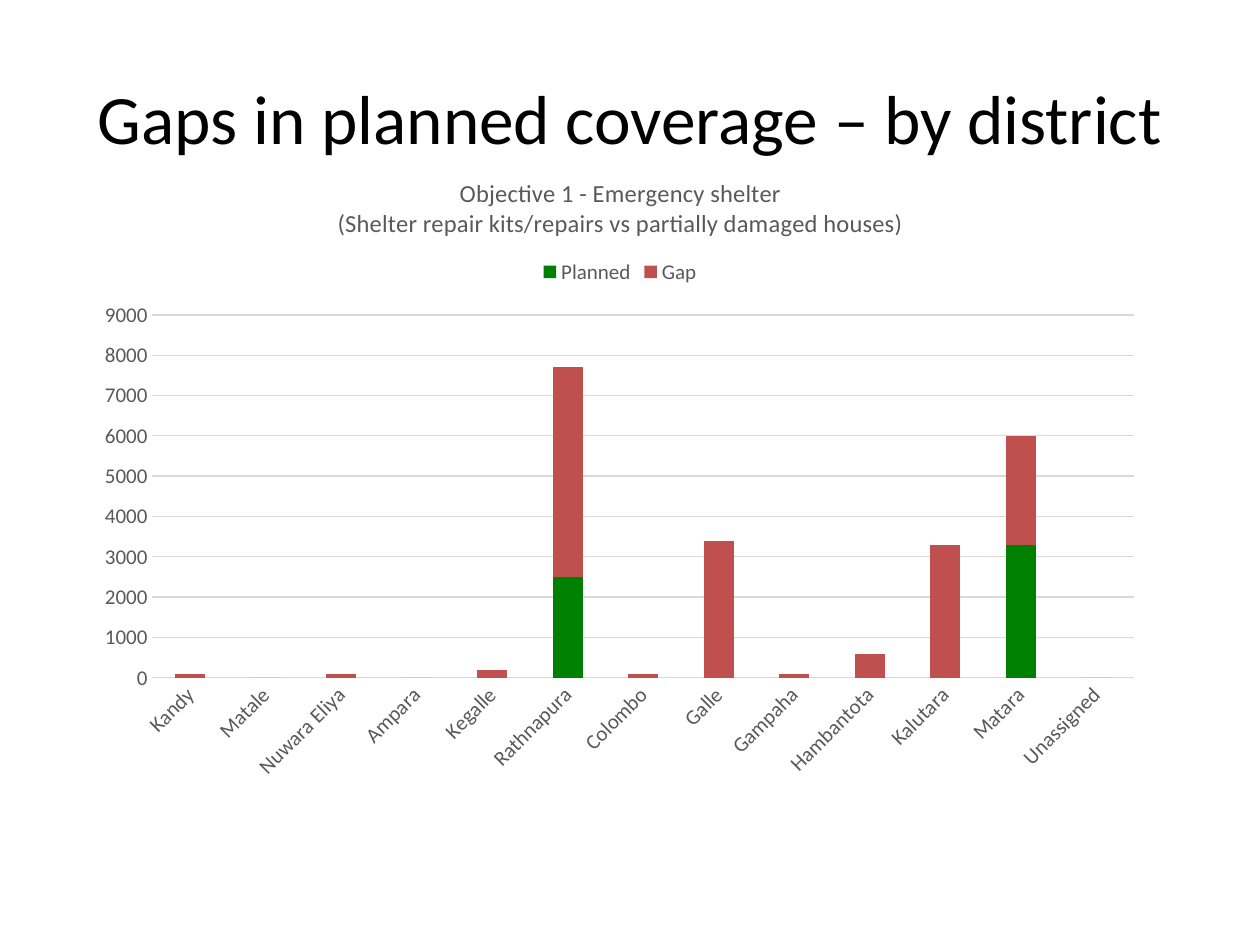
import pptx
import pptx.chart.data
import pptx.dml.color
import pptx.enum.chart
import pptx.enum.text
import pptx.oxml
import pptx.oxml.ns
import pptx.util

BLACK = pptx.dml.color.RGBColor(0x00, 0x00, 0x00)
GRAY = pptx.dml.color.RGBColor(0x59, 0x59, 0x59)
LIGHT_GRAY = pptx.dml.color.RGBColor(0xD9, 0xD9, 0xD9)
GREEN = pptx.dml.color.RGBColor(0x00, 0x80, 0x00)
RED = pptx.dml.color.RGBColor(0xC0, 0x50, 0x4D)
CHART_WIDTH, CHART_HEIGHT = 8.5, 5.07


def style_font(font, size, color):
    font.name = "Calibri"
    font.size = pptx.util.Pt(size)
    font.bold = False
    font.color.rgb = color


def place(element, index, target, **inches):
    for old_layout in element.findall(pptx.oxml.ns.qn("c:layout")):
        element.remove(old_layout)
    inner = '<c:layoutTarget val="inner"/>' if target == "inner" else ""
    modes = '<c:xMode val="edge"/><c:yMode val="edge"/>'
    values = "".join(
        f'<c:{name} val="{length / (CHART_WIDTH if name in "xw" else CHART_HEIGHT)}"/>'
        for name, length in inches.items())
    namespace = pptx.oxml.ns.nsdecls("c")
    element.insert(index, pptx.oxml.parse_xml(
        f"<c:layout {namespace}><c:manualLayout>{inner}{modes}{values}"
        "</c:manualLayout></c:layout>"))


presentation = pptx.Presentation()
presentation.slide_width = pptx.util.Inches(10)
presentation.slide_height = pptx.util.Inches(7.5)
width, height = presentation.slide_width, presentation.slide_height
slide = presentation.slides.add_slide(presentation.slide_layouts[5])

title = slide.shapes.title
title.left, title.top = int(width * 0.05), int(height * 0.04)
title.width, title.height = int(width * 0.9), int(height / 6)
title.text_frame.text = "Gaps in planned coverage – by district"
title.text_frame.vertical_anchor = pptx.enum.text.MSO_ANCHOR.MIDDLE
paragraph = title.text_frame.paragraphs[0]
paragraph.alignment = pptx.enum.text.PP_ALIGN.CENTER
style_font(paragraph.font, 39.6, BLACK)

districts = [
    ("Kandy", None, 100),
    ("Matale", None, 0),
    ("Nuwara Eliya", None, 100),
    ("Ampara", None, 0),
    ("Kegalle", None, 200),
    ("Rathnapura", 2500, 5200),
    ("Colombo", None, 100),
    ("Galle", None, 3400),
    ("Gampaha", None, 100),
    ("Hambantota", None, 600),
    ("Kalutara", None, 3300),
    ("Matara", 3300, 2700),
    ("Unassigned", None, 0),
]
names, planned, gap = zip(*districts)
chart_data = pptx.chart.data.CategoryChartData()
chart_data.categories = names
chart_data.add_series("Planned", planned)
chart_data.add_series("Gap", gap)

chart = slide.shapes.add_chart(
    pptx.enum.chart.XL_CHART_TYPE.COLUMN_STACKED,
    pptx.util.Inches(0.67), pptx.util.Inches(1.21),
    pptx.util.Inches(CHART_WIDTH), pptx.util.Inches(CHART_HEIGHT), chart_data).chart
style_font(chart.font, 12, BLACK)

plot = chart.plots[0]
plot.gap_width = 150
plot.overlap = 100
plot.vary_by_categories = False
for series, color in zip(plot.series, (GREEN, RED)):
    series.format.fill.solid()
    series.format.fill.fore_color.rgb = color
    series.invert_if_negative = False

chart.has_title = True
title_frame = chart.chart_title.text_frame
title_frame.text = ("Objective 1 - Emergency shelter\n"
                    "(Shelter repair kits/repairs vs partially damaged houses)")
for paragraph in title_frame.paragraphs:
    style_font(paragraph.font, 14, GRAY)
    for run in paragraph.runs:
        style_font(run.font, 14, GRAY)

chart.has_legend = True
chart.legend.position = pptx.enum.chart.XL_LEGEND_POSITION.TOP
chart.legend.include_in_layout = False
style_font(chart.legend.font, 12, GRAY)

for axis in (chart.category_axis, chart.value_axis):
    axis.major_tick_mark = pptx.enum.chart.XL_TICK_MARK.NONE
    axis.minor_tick_mark = pptx.enum.chart.XL_TICK_MARK.NONE
    style_font(axis.tick_labels.font, 12, GRAY)

value_axis = chart.value_axis
value_axis.minimum_scale = 0
value_axis.maximum_scale = 9000
value_axis.major_unit = 1000
value_axis.has_major_gridlines = True
value_axis.format.line.fill.background()
for line in (chart.category_axis.format.line, value_axis.major_gridlines.format.line):
    line.color.rgb = LIGHT_GRAY
    line.width = pptx.util.Pt(0.75)

label_properties = chart.category_axis.tick_labels.font._element.getparent().getparent().getparent()
label_properties.find(pptx.oxml.ns.qn("a:bodyPr")).set("rot", "-2700000")

plot_area = chart._chartSpace.chart.plotArea
place(plot_area, 0, "inner", x=0.54, y=1.29, w=7.79, h=2.88)
place(chart.chart_title._element, 1, "outer", x=1.98, y=0.16)
place(chart.legend._element, 1, "outer", x=3.59, y=0.81)

presentation.save("out.pptx")
